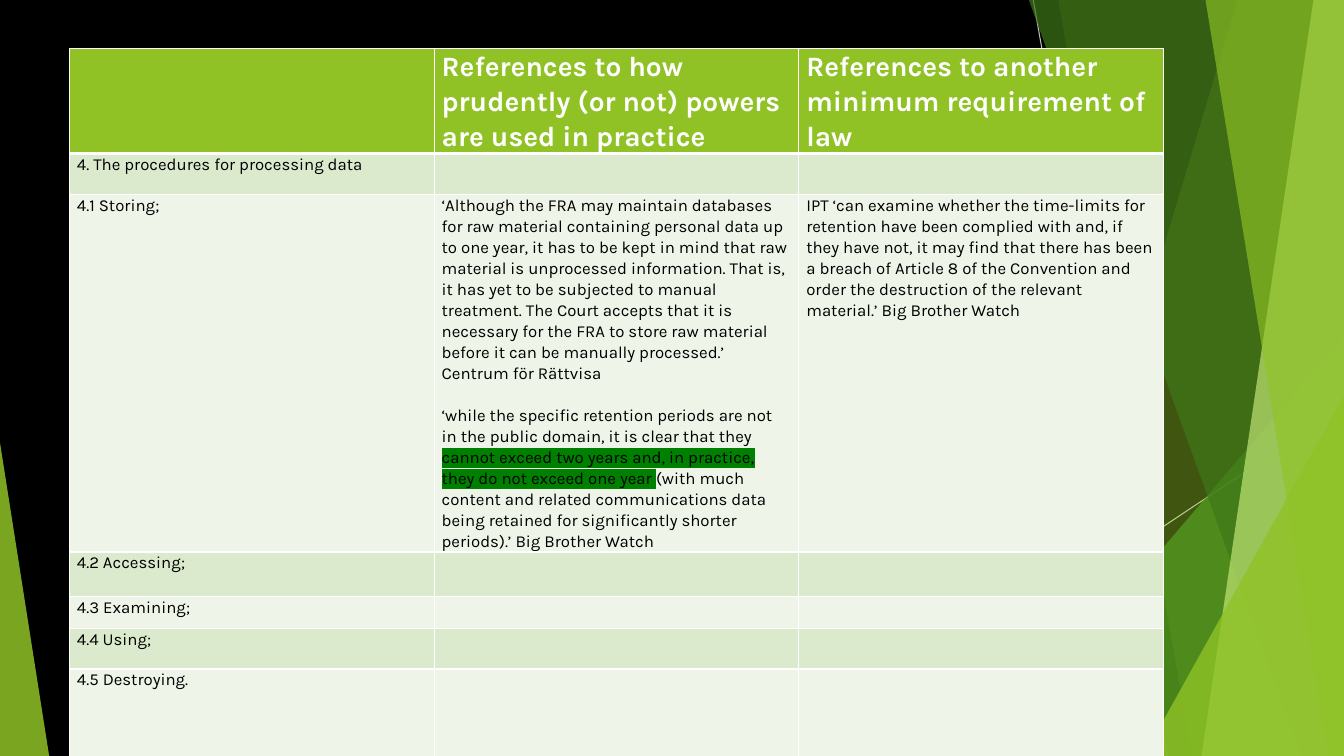
from lxml.etree import SubElement
from pptx import Presentation
from pptx.dml.color import RGBColor
from pptx.enum.shapes import MSO_CONNECTOR as Connector, MSO_SHAPE as Shape
from pptx.oxml import parse_xml
from pptx.oxml.ns import nsdecls, qn
from pptx.util import Cm, Pt

# Content
HEADER = [
    "",
    "References to how prudently (or not) powers are used in practice",
    "References to another minimum requirement of law",
]
PROCEDURES = [
    "4. The procedures for processing data",
    "4.1 Storing;",
    "4.2 Accessing;",
    "4.3 Examining;",
    "4.4 Using;",
    "4.5 Destroying.",
]
STORING_PRACTICE = (
    "‘Although the FRA may maintain databases for raw material containing "
    "personal data up to one year, it has to be kept in mind that raw material "
    "is unprocessed information. That is, it has yet to be subjected "
    "to manual treatment. The Court accepts that it is necessary for the FRA "
    "to store raw material before it can be manually processed.’ "
    "Centrum för Rättvisa\n"
    "‘while the specific retention periods are not in the public domain, it is "
    "clear that they |cannot exceed two years and, in practice, they do not "
    "exceed one year |(with much content and related communications data being "
    "retained for significantly shorter periods).’ Big Brother Watch"
)  # a newline parts paragraphs, bars enclose highlighted words
STORING_LAW = (
    "IPT ‘can examine whether the time-limits for retention have been complied "
    "with and, if they have not, it may find that there has been a breach of "
    "Article 8 of the Convention and order the destruction of the relevant "
    "material.’ Big Brother Watch"
)
ROWS = [HEADER] + [[procedure, "", ""] for procedure in PROCEDURES]
ROWS[2][1:] = [STORING_PRACTICE, STORING_LAW]

# Layout in centimetres
WIDTH, HEIGHT = 33.87, 19.05
TABLE_LEFT, TABLE_TOP, COLUMN_WIDTH = 1.75, 1.22, 9.19
ROW_HEIGHTS = [2.65, 1.04, 9, 1.12, 0.81, 1.02, 5.82]
GREEN, WHITE, BLACK, HIGHLIGHT = "90C226", "FFFFFF", "000000", "008000"
BANDS = ["EEF4E8", "DBE9CD"]

RAYS = [  # start, end, colour
    ((26.04, 0), (29.41, HEIGHT), "BFBFBF"),
    ((WIDTH, 10.24), (20.62, HEIGHT), "D9D9D9"),
]
FACETS = [  # kind, two measures, colour, opacity in percent
    ("blade", 31.19, 25.5, GREEN, 30),  # blade: left edge at top and bottom
    ("blade", 26.67, 30.05, GREEN, 20),
    ("right", 9.04, 10.59, "54A021", 72),  # triangle: width and height
    ("blade", 25.93, 32.79, "3F7819", 70),
    ("blade", 33.1, 30.28, "C0E474", 70),
    ("blade", 30.38, 33.48, GREEN, 65),
    ("right", 5.05, 9.07, GREEN, 80),
    ("left", 1.24, 7.9, GREEN, 85),
]


def rgb(code):
    return RGBColor.from_string(code)


def add_ray(slide, start, end, color):
    ray = slide.shapes.add_connector(
        Connector.STRAIGHT, *[Cm(value) for value in start + end])
    ray.line.color.rgb = rgb(color)
    ray.line.width = Pt(0.75)
    SubElement(ray._element.spPr, qn("a:effectLst"))


def add_facet(slide, kind, first, second, color, opacity):
    if kind == "blade":
        outline = slide.shapes.build_freeform(Cm(first), 0)
        corners = [(WIDTH, 0), (WIDTH, HEIGHT), (second, HEIGHT)]
        outline.add_line_segments([(Cm(x), Cm(y)) for x, y in corners])
        facet = outline.convert_to_shape()
    else:
        left = WIDTH - first if kind == "right" else 0
        facet = slide.shapes.add_shape(
            Shape.ISOSCELES_TRIANGLE,
            Cm(left), Cm(HEIGHT - second), Cm(first), Cm(second))
        facet.adjustments[0] = 1 if kind == "right" else 0
    facet.shadow.inherit = False
    facet.line.fill.background()
    facet.fill.solid()
    facet.fill.fore_color.rgb = rgb(color)
    tint = facet._element.spPr.find(qn("a:solidFill"))[0]
    SubElement(tint, qn("a:alpha"), val=str(opacity * 1000))


def add_borders(cell, is_header, below_header):
    points = {"L": 1, "R": 1, "T": 3 if below_header else 1,
              "B": 3 if is_header else 1}
    for side, width in points.items():
        cell._tc.get_or_add_tcPr().append(parse_xml(
            f'<a:ln{side} {nsdecls("a")} w="{Pt(width)}"><a:solidFill>'
            f'<a:srgbClr val="{WHITE}"/></a:solidFill></a:ln{side}>'))


def write_cell(cell, text, is_header):
    cell.margin_left = cell.margin_right = Cm(0.19)
    cell.margin_top = cell.margin_bottom = 0
    frame = cell.text_frame
    frame.text = text.replace("|", "")
    for paragraph, words in zip(frame.paragraphs, text.split("\n")):
        paragraph.line_spacing = 1.07
        paragraph.text = ""
        for index, part in enumerate(words.split("|")):
            run = paragraph.add_run()
            run.text = part
            run.font.name = "Karla"
            run.font.size = Pt(20 if is_header else 12)
            run.font.bold = is_header
            run.font.color.rgb = rgb(WHITE if is_header else BLACK)
            if index % 2:
                run.font._element.find(qn("a:latin")).addprevious(parse_xml(
                    f'<a:highlight {nsdecls("a")}>'
                    f'<a:srgbClr val="{HIGHLIGHT}"/></a:highlight>'))
    for paragraph in frame.paragraphs[1:]:
        paragraph.space_before = Pt(15)


def add_requirements(slide):
    table = slide.shapes.add_table(
        len(ROWS), len(HEADER), Cm(TABLE_LEFT), Cm(TABLE_TOP),
        Cm(COLUMN_WIDTH * len(HEADER)), Cm(sum(ROW_HEIGHTS))).table
    for column in table.columns:
        column.width = Cm(COLUMN_WIDTH)
    for r, (texts, height) in enumerate(zip(ROWS, ROW_HEIGHTS)):
        table.rows[r].height = Cm(height)
        for c, text in enumerate(texts):
            cell = table.cell(r, c)
            write_cell(cell, text, r == 0)
            add_borders(cell, r == 0, r == 1)
            cell.fill.solid()
            cell.fill.fore_color.rgb = rgb(BANDS[r % 2] if r else GREEN)


def main():
    deck = Presentation()
    deck.slide_width, deck.slide_height = Cm(WIDTH), Cm(HEIGHT)
    slide = deck.slides.add_slide(deck.slide_layouts[6])
    slide.background.fill.solid()
    slide.background.fill.fore_color.rgb = rgb(BLACK)

    # Decoration behind the table
    for ray in RAYS:
        add_ray(slide, *ray)
    for facet in FACETS:
        add_facet(slide, *facet)

    add_requirements(slide)
    deck.save("out.pptx")


if __name__ == "__main__":
    main()
